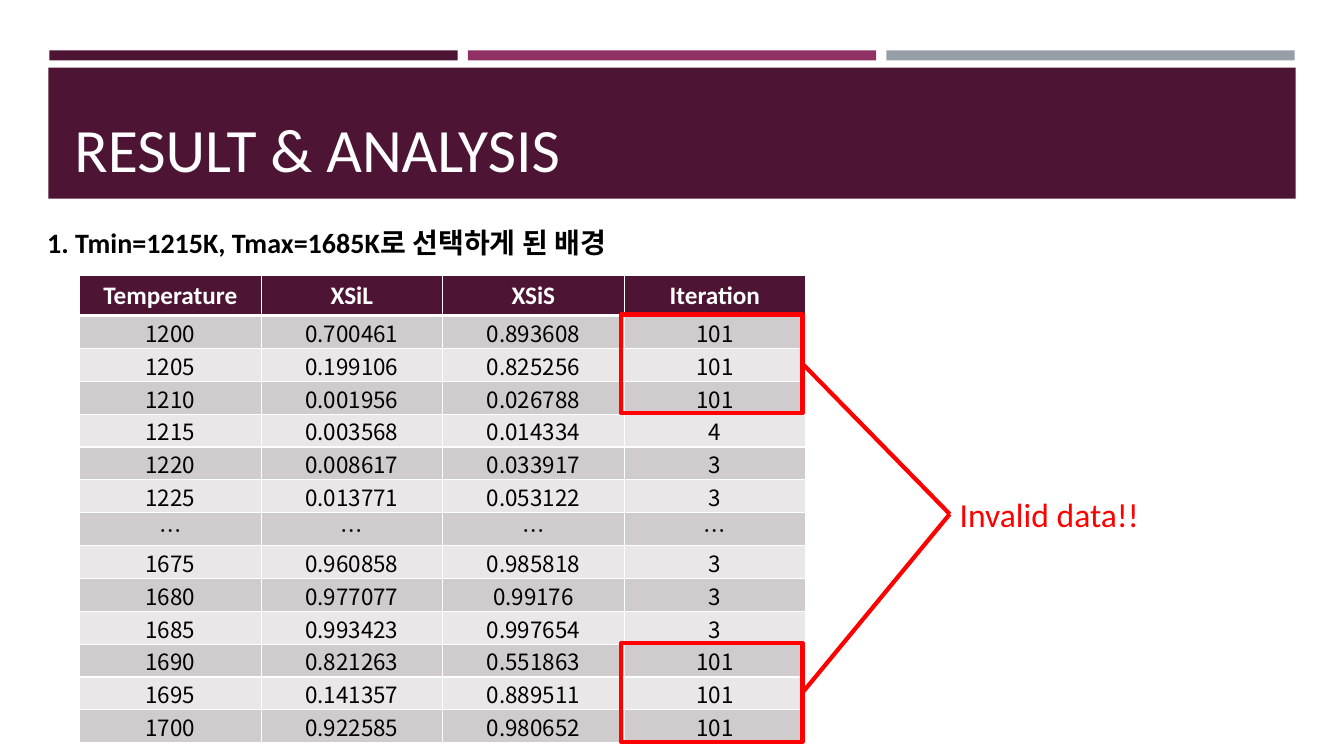
"""Build the Result & Analysis slide with its table of invalid temperature data."""
from lxml.etree import SubElement
from pptx import Presentation
from pptx.dml.color import RGBColor
from pptx.enum.shapes import MSO_CONNECTOR as Connector, MSO_SHAPE as Shape
from pptx.enum.text import MSO_ANCHOR as Anchor, PP_ALIGN as Align
from pptx.oxml.ns import qn
from pptx.util import Inches, Pt

COLORS = {
    "plum": "4D1434", "berry": "903163", "slate": "969FA7", "white": "FFFFFF",
    "black": "000000", "red": "FF0000", "dark_band": "D0CCCE", "light_band": "E9E7E8",
}
LATIN, KOREAN = "Calibri", "Noto Sans CJK KR"
TABLE_LEFT, TABLE_TOP, COLUMN = 0.79, 2.73, 1.8
HEADER_ROW, BODY_ROW = 0.39, 4.24 / 13
BAR_LEFT, BAR_WIDTH, BAR_STEP = 0.49, 4.05, 4.15
ROWS = [
    ("Temperature", "XSiL", "XSiS", "Iteration"),
    ("1200", "0.700461", "0.893608", "101"),
    ("1205", "0.199106", "0.825256", "101"),
    ("1210", "0.001956", "0.026788", "101"),
    ("1215", "0.003568", "0.014334", "4"),
    ("1220", "0.008617", "0.033917", "3"),
    ("1225", "0.013771", "0.053122", "3"),
    ("…", "…", "…", "…"),
    ("1675", "0.960858", "0.985818", "3"),
    ("1680", "0.977077", "0.99176", "3"),
    ("1685", "0.993423", "0.997654", "3"),
    ("1690", "0.821263", "0.551863", "101"),
    ("1695", "0.141357", "0.889511", "101"),
    ("1700", "0.922585", "0.980652", "101"),
]


def color(name):
    return RGBColor.from_string(COLORS[name])


def write(frame, text, size, color_name, bold=False, font_name=LATIN, align=Align.LEFT):
    paragraph = frame.paragraphs[0]
    paragraph.text = text
    paragraph.alignment = align
    font = paragraph.font
    font.size, font.bold, font.name = Pt(size), bold, font_name
    font.color.rgb = color(color_name)
    properties = paragraph._p.pPr.find(qn("a:defRPr"))
    SubElement(properties, qn("a:ea"), typeface=KOREAN)


def add_text(slide, box, text, size, color_name, bold=False, anchor=Anchor.TOP):
    shape = slide.shapes.add_textbox(*map(Inches, box))
    shape.text_frame.word_wrap = True
    shape.text_frame.vertical_anchor = anchor
    write(shape.text_frame, text, size, color_name, bold)
    return shape


def add_rectangle(slide, box, fill=None, line=None):
    shape = slide.shapes.add_shape(Shape.RECTANGLE, *map(Inches, box))
    shape.shadow.inherit = False
    if fill:
        shape.fill.solid()
        shape.fill.fore_color.rgb = color(fill)
    else:
        shape.fill.background()
    if line:
        shape.line.color.rgb = color(line)
        shape.line.width = Pt(3)
    else:
        shape.line.fill.background()
    return shape


def set_borders(cell, top, bottom):
    properties = cell._tc.get_or_add_tcPr()
    sides = {"a:lnL": 1, "a:lnR": 1, "a:lnT": top, "a:lnB": bottom}
    for position, (side, width) in enumerate(sides.items()):
        border = SubElement(properties, qn(side), w=str(Pt(width)))
        fill = SubElement(border, qn("a:solidFill"))
        SubElement(fill, qn("a:srgbClr"), val=COLORS["white"])
        properties.insert(position, border)


def fill_cell(cell, text, row):
    cell.fill.solid()
    if row == 0:
        cell.fill.fore_color.rgb = color("plum")
        write(cell.text_frame, text, 18, "white", True, align=Align.CENTER)
    else:
        cell.fill.fore_color.rgb = color("dark_band" if row % 2 else "light_band")
        cell.margin_left = cell.margin_right = cell.margin_top = Inches(0.01)
        cell.margin_bottom = 0
        cell.vertical_anchor = Anchor.MIDDLE
        write(cell.text_frame, text, 16, "black", font_name=KOREAN, align=Align.CENTER)
    set_borders(cell, top=3 if row == 1 else 1, bottom=3 if row == 0 else 1)


def add_data_table(slide):
    columns = len(ROWS[0])
    height = HEADER_ROW + BODY_ROW * (len(ROWS) - 1)
    box = (TABLE_LEFT, TABLE_TOP, COLUMN * columns, height)
    table = slide.shapes.add_table(len(ROWS), columns, *map(Inches, box)).table
    for row, values in enumerate(ROWS):
        table.rows[row].height = Inches(BODY_ROW if row else HEADER_ROW)
        for column, text in enumerate(values):
            fill_cell(table.cell(row, column), text, row)


def mark_invalid_rows(slide, first_row, label):
    left = TABLE_LEFT + 3 * COLUMN - 0.03
    top = TABLE_TOP + HEADER_ROW + (first_row - 1) * BODY_ROW
    frame = add_rectangle(slide, (left, top, COLUMN, 3 * BODY_ROW), line="red")
    connector = slide.shapes.add_connector(Connector.STRAIGHT, 0, 0, 0, 0)
    connector.begin_connect(frame, 3)
    connector.end_connect(label, 1)
    connector.line.color.rgb = color("red")
    connector.line.width = Pt(3)
    SubElement(connector._element.spPr, qn("a:effectLst"))


def main():
    presentation = Presentation()
    presentation.slide_width, presentation.slide_height = Inches(13.33), Inches(7.5)
    slide = presentation.slides.add_slide(presentation.slide_layouts[6])
    for index, name in enumerate(("plum", "berry", "slate")):
        add_rectangle(slide, (BAR_LEFT + index * BAR_STEP, 0.5, BAR_WIDTH, 0.1), name)
    add_rectangle(slide, (0.48, 0.67, 12.37, 1.3), "plum")
    add_text(slide, (0.64, 0.77, 12.06, 1.11), "RESULT & ANALYSIS", 44, "white",
             anchor=Anchor.BOTTOM)
    add_text(slide, (0.37, 2.19, 11.24, 0.44),
             "1. Tmin=1215K, Tmax=1685K로 선택하게 된 배경", 20, "black", True)
    add_data_table(slide)
    label = add_text(slide, (9.42, 4.85, 2.43, 0.5), "Invalid data!!", 24, "red")
    for first_row in (1, 11):
        mark_invalid_rows(slide, first_row, label)
    presentation.save("out.pptx")


if __name__ == "__main__":
    main()
